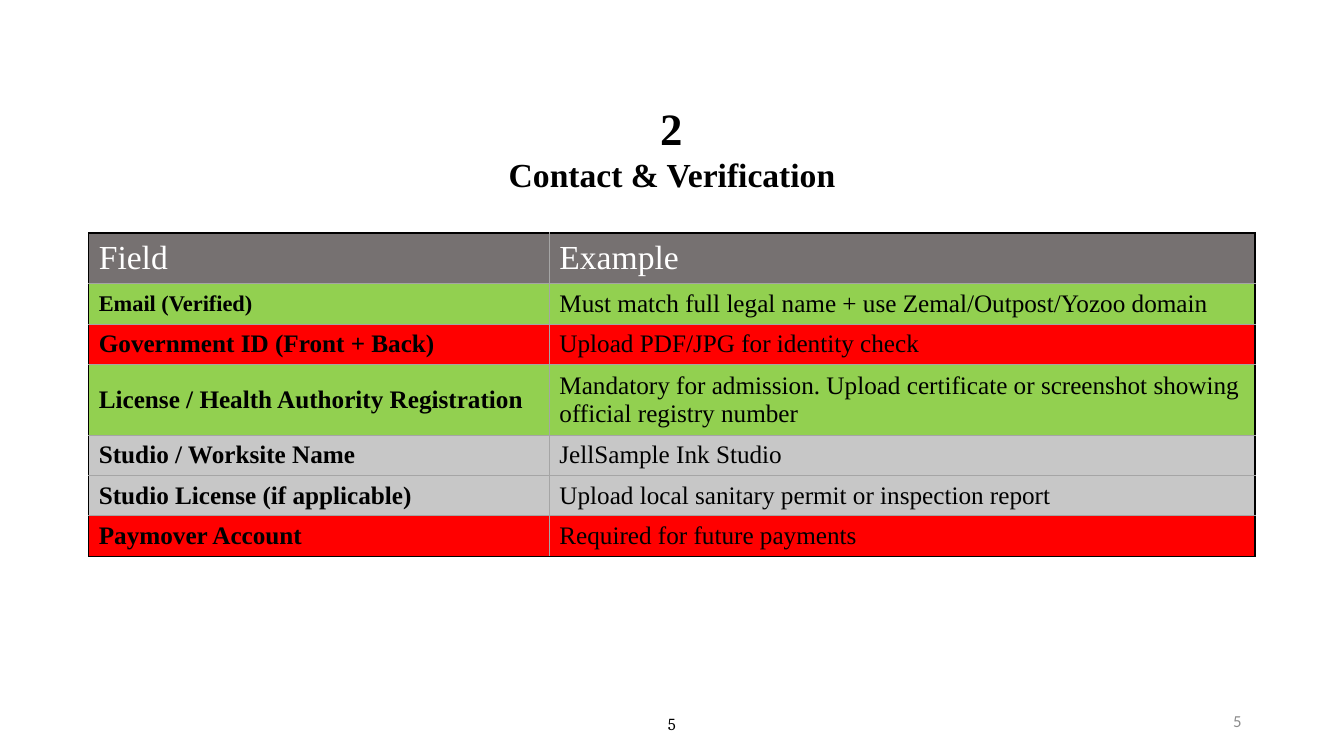
from dataclasses import dataclass

from lxml.etree import SubElement
from pptx import Presentation
from pptx.dml.color import RGBColor
from pptx.enum.text import MSO_ANCHOR as Anchor, MSO_AUTO_SIZE as AutoSize, PP_ALIGN as Align
from pptx.oxml.ns import qn
from pptx.util import Pt


@dataclass(frozen=True)
class Theme:
    """Fonts, sizes and colours of the slide."""
    serif: str = "Times New Roman"
    number_size: float = 32
    heading_size: float = 24
    email_size: float = 16
    body_size: float = 18
    footer_size: float = 12
    ink: str = "000000"
    muted: str = "8C8C8C"
    white: str = "FFFFFF"
    header: str = "767171"
    green: str = "92D050"
    red: str = "FF0000"
    grey: str = "C7C7C7"
    rule: str = "A5A5A5"
    frame_width: float = 0.96
    rule_width: float = 0.5


THEME = Theme()
COLUMN_WIDTHS = (329, 504)
FIELDS = (
    ("Field", "Example", THEME.header, 35.6),
    ("Email (Verified)", "Must match full legal name + use Zemal/Outpost/Yozoo domain", THEME.green, 28.9),
    ("Government ID (Front + Back)", "Upload PDF/JPG for identity check", THEME.red, 28.9),
    ("License / Health Authority Registration",
     "Mandatory for admission. Upload certificate or screenshot showing official registry number",
     THEME.green, 50.3),
    ("Studio / Worksite Name", "JellSample Ink Studio", THEME.grey, 28.9),
    ("Studio License (if applicable)", "Upload local sanitary permit or inspection report", THEME.grey, 28.9),
    ("Paymover Account", "Required for future payments", THEME.red, 28.9),
)


def write(frame, text, size, color=THEME.ink, font=THEME.serif, bold=False, align=Align.LEFT):
    """Add one formatted run to the first paragraph of a text frame."""
    paragraph = frame.paragraphs[0]
    paragraph.alignment = align
    run = paragraph.add_run()
    run.text = text
    run.font.name = font
    run.font.size = Pt(size)
    run.font.bold = bold
    run.font.color.rgb = RGBColor.from_string(color)


def add_label(slide, place, text, size, anchor=Anchor.MIDDLE, wrap=True, **style):
    """Add a text box holding one line."""
    frame = slide.shapes.add_textbox(*map(Pt, place)).text_frame
    frame.word_wrap = wrap
    frame.vertical_anchor = anchor
    write(frame, text, size, **style)


def set_heading(slide, text):
    """Place and write the slide title."""
    heading = slide.shapes.title
    heading.left, heading.top, heading.width, heading.height = map(Pt, (56, 106.5, 848, 36))
    frame = heading.text_frame
    frame.word_wrap = True
    frame.auto_size = AutoSize.NONE
    frame.vertical_anchor = Anchor.MIDDLE
    write(frame, text, THEME.heading_size, bold=True, align=Align.CENTER)


def draw_borders(cell, framed_sides):
    """Draw the outer frame on the given sides and thin rules on the rest."""
    properties = cell._tc.get_or_add_tcPr()
    for side in "LRTB":
        framed = side in framed_sides
        width = THEME.frame_width if framed else THEME.rule_width
        border = SubElement(properties, qn(f"a:ln{side}"), w=str(Pt(width)))
        fill = SubElement(border, qn("a:solidFill"))
        SubElement(fill, qn("a:srgbClr"), val=THEME.ink if framed else THEME.rule)


def fill_cell(cell, text, fill, framed_sides, **style):
    """Write, border and colour one table cell."""
    draw_borders(cell, framed_sides)
    cell.fill.solid()
    cell.fill.fore_color.rgb = RGBColor.from_string(fill)
    cell.vertical_anchor = Anchor.MIDDLE
    write(cell.text_frame, text, **style)


def add_field_table(slide):
    """Add the table of fields and examples."""
    height = sum(row_height for *_, row_height in FIELDS)
    table = slide.shapes.add_table(
        len(FIELDS), len(COLUMN_WIDTHS), Pt(63.4), Pt(166.4), Pt(sum(COLUMN_WIDTHS)), Pt(height)).table
    table.horz_banding = False
    for column, width in zip(table.columns, COLUMN_WIDTHS):
        column.width = Pt(width)
    for row, (field, example, fill, row_height) in enumerate(FIELDS):
        table.rows[row].height = Pt(row_height)
        ends = "T" if row == 0 else "B" if row == len(FIELDS) - 1 else ""
        is_header = row == 0
        color = THEME.white if is_header else THEME.ink
        size = THEME.heading_size if is_header else THEME.body_size
        field_size = THEME.email_size if row == 1 else size
        fill_cell(table.cell(row, 0), field, fill, "L" + ends,
                  size=field_size, color=color, bold=not is_header)
        fill_cell(table.cell(row, 1), example, fill, "R" + ends, size=size, color=color)


def main():
    """Build and save the slide."""
    deck = Presentation()
    deck.slide_width, deck.slide_height = Pt(960), Pt(540)
    slide = deck.slides.add_slide(deck.slide_layouts[5])
    add_label(slide, (678, 500.5, 216, 28.8), "5", THEME.footer_size,
              color=THEME.muted, font="Calibri", align=Align.RIGHT)
    add_field_table(slide)
    set_heading(slide, "Contact & Verification")
    add_label(slide, (464.5, 68.5, 30.5, 46), "2", THEME.number_size,
              anchor=Anchor.TOP, wrap=False, bold=True)
    add_label(slide, (372, 502.5, 216, 28.8), "5", THEME.footer_size,
              font="Cambria", align=Align.CENTER)
    deck.save("out.pptx")


if __name__ == "__main__":
    main()
